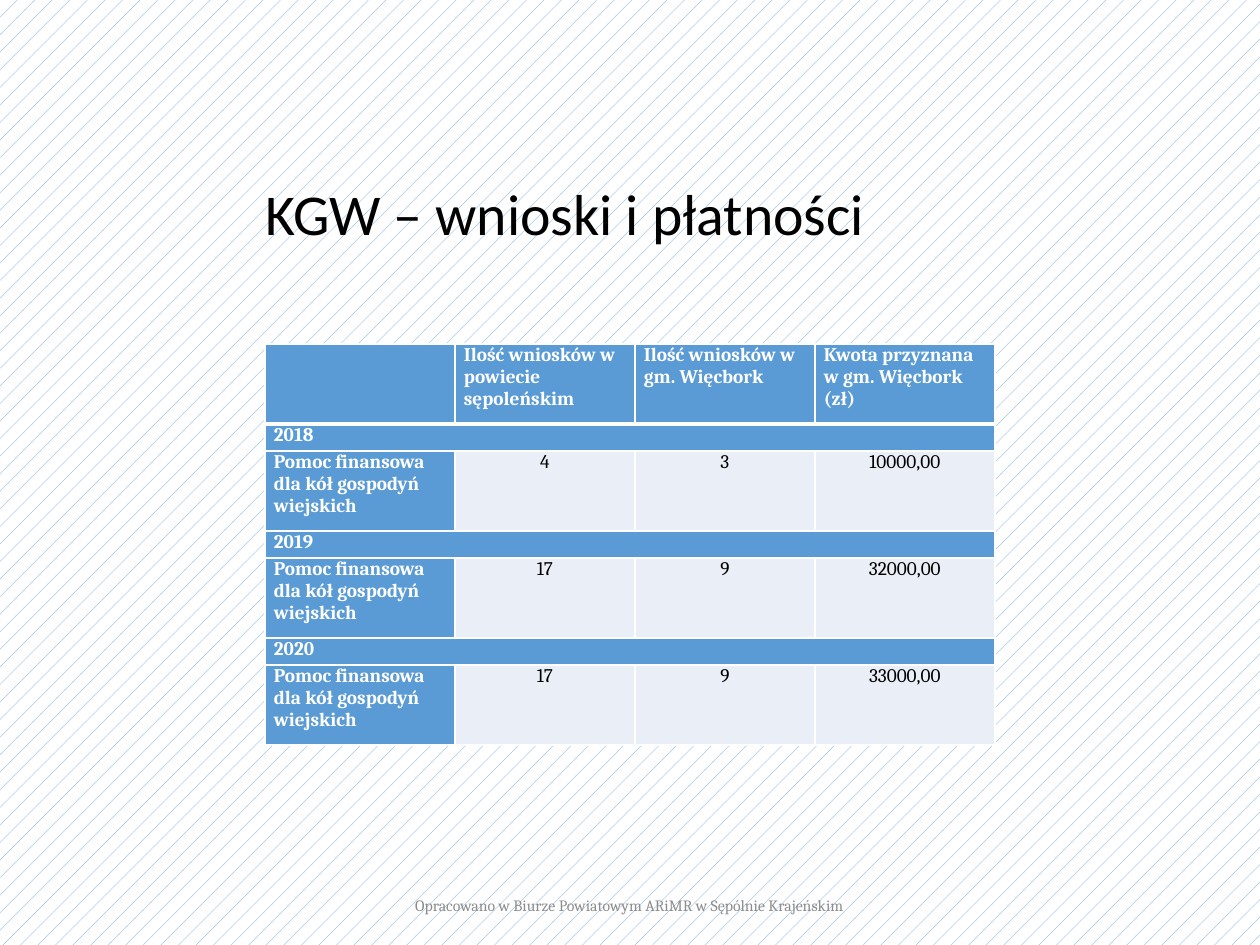
from pptx import Presentation
from pptx.dml.color import RGBColor
from pptx.enum.dml import MSO_PATTERN
from pptx.enum.text import MSO_ANCHOR, PP_ALIGN
from pptx.oxml import parse_xml
from pptx.oxml.ns import nsdecls
from pptx.util import Emu, Pt

PX = 914400 // 126
BLUE, PALE, WHITE, BLACK, GREY = "5B9BD5", "EAEFF7", "FFFFFF", "000000", "8C8C8C"

HEADERS = ["", "Ilość wniosków w powiecie sępoleńskim",
           "Ilość wniosków w gm. Więcbork", "Kwota przyznana w gm. Więcbork (zł)"]
AID = "Pomoc finansowa dla kół gospodyń wiejskich"
YEARS = {
    "2018": ["4", "3", "10000,00"],
    "2019": ["17", "9", "32000,00"],
    "2020": ["17", "9", "33000,00"],
}
COL_WIDTHS = [190, 180, 180, 180]
TALL, LOW = 80, 27


def px(n):
    return Emu(n * PX)


def color(hex_value):
    return RGBColor.from_string(hex_value)


def write(tf, text, size=11, font="Cambria", fill=BLACK, bold=False,
          align=PP_ALIGN.LEFT, spacing=None):
    p = tf.paragraphs[0]
    p.alignment = align
    if spacing:
        p.line_spacing = spacing
    r = p.add_run()
    r.text = text
    r.font.size, r.font.name, r.font.bold = Pt(size), font, bold
    r.font.color.rgb = color(fill)


def set_borders(cell, bottom=1):
    tc_pr = cell._tc.get_or_add_tcPr()
    for side, width in zip("LRTB", (1, 1, 1, bottom)):
        tc_pr.append(parse_xml(
            f'<a:ln{side} {nsdecls("a")} w="{Pt(width)}"><a:solidFill>'
            f'<a:srgbClr val="{WHITE}"/></a:solidFill></a:ln{side}>'))


def format_cell(cell, text, is_label, bottom=1):
    cell.margin_left = cell.margin_right = px(9)
    cell.margin_top = cell.margin_bottom = 0
    set_borders(cell, bottom)
    cell.fill.solid()
    cell.fill.fore_color.rgb = color(BLUE if is_label else PALE)
    if is_label:
        write(cell.text_frame, text, fill=WHITE, bold=True)
    else:
        write(cell.text_frame, text, align=PP_ALIGN.CENTER)


def set_background(s):
    fill = s.background.fill
    fill.patterned()
    fill.pattern = MSO_PATTERN.PERCENT_5
    fill.fore_color.rgb = color(BLUE)
    fill.back_color.rgb = color(WHITE)


def add_title(s, text):
    sp = s.shapes.title
    sp.left, sp.top, sp.width, sp.height = px(253), px(125), px(937), px(183)
    sp.text_frame.vertical_anchor = MSO_ANCHOR.MIDDLE
    write(sp.text_frame, text, size=33, font="Calibri", spacing=0.9)


def add_payments_table(s):
    rows = [HEADERS]
    for year, values in YEARS.items():
        rows += [[year, "", "", ""], [AID, *values]]
    heights = [TALL] + [LOW, TALL] * len(YEARS)
    table = s.shapes.add_table(len(rows), len(COL_WIDTHS), px(265), px(344),
                               px(sum(COL_WIDTHS)), px(sum(heights))).table
    table.horz_banding = False
    for col, width in zip(table.columns, COL_WIDTHS):
        col.width = px(width)
    for i, (values, height) in enumerate(zip(rows, heights)):
        table.rows[i].height = px(height)
        is_year = height == LOW
        for j, text in enumerate(values):
            format_cell(table.cell(i, j), text, i == 0 or j == 0 or is_year,
                        bottom=3 if i == 0 else 1)
        if is_year:
            table.cell(i, 0).merge(table.cell(i, len(COL_WIDTHS) - 1))


def add_footer(s, text):
    tf = s.shapes.add_textbox(px(379), px(880), px(500), px(50)).text_frame
    tf.word_wrap = True
    tf.vertical_anchor = MSO_ANCHOR.MIDDLE
    write(tf, text, size=9, fill=GREY, align=PP_ALIGN.CENTER)


def main():
    prs = Presentation()
    prs.slide_width, prs.slide_height = px(1260), px(945)
    s = prs.slides.add_slide(prs.slide_layouts[5])
    set_background(s)
    add_title(s, "KGW – wnioski i płatności")
    add_payments_table(s)
    add_footer(s, "Opracowano w Biurze Powiatowym ARiMR w Sępólnie Krajeńskim")
    prs.save("out.pptx")


if __name__ == "__main__":
    main()
